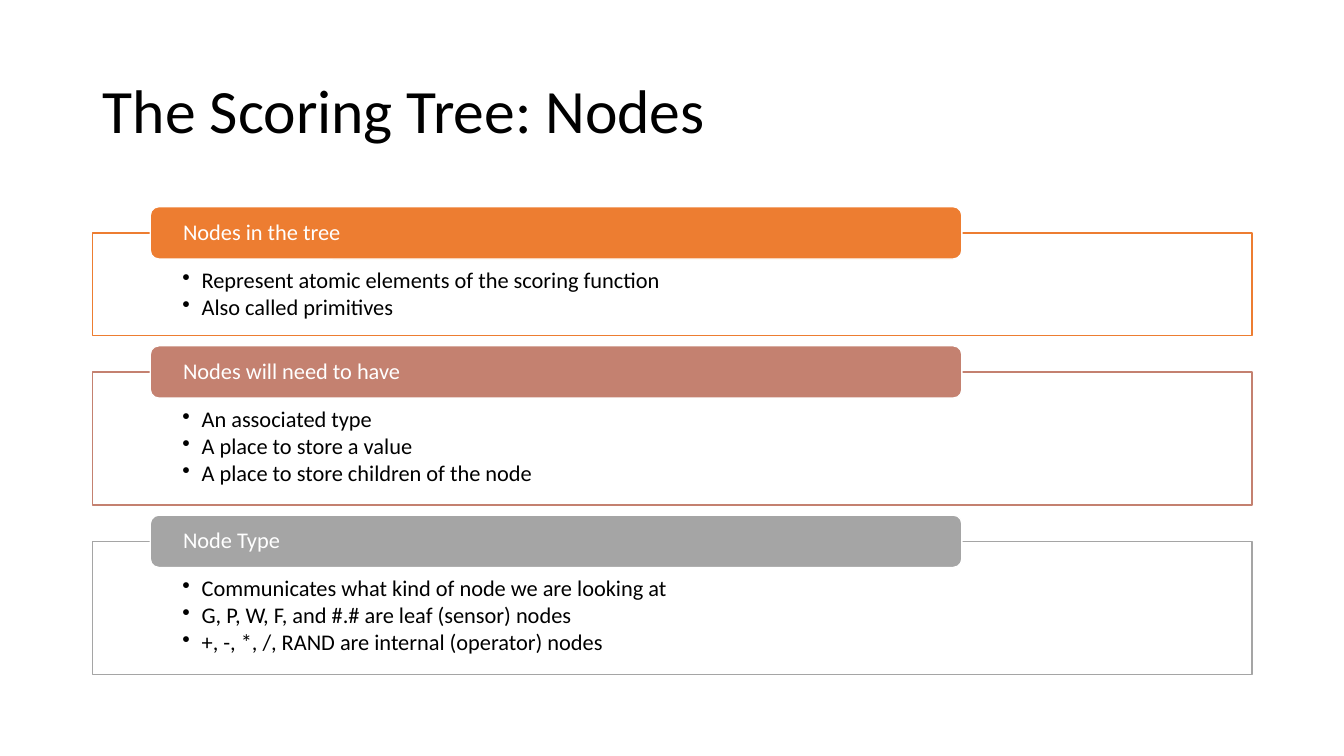
from lxml import etree
from pptx import Presentation
from pptx.dml.color import RGBColor
from pptx.enum.shapes import MSO_SHAPE
from pptx.enum.text import MSO_ANCHOR, PP_ALIGN
from pptx.oxml.ns import qn
from pptx.util import Inches, Pt

RECTANGLE = MSO_SHAPE.RECTANGLE
ROUNDED = MSO_SHAPE.ROUNDED_RECTANGLE
TOP = MSO_ANCHOR.TOP
MIDDLE = MSO_ANCHOR.MIDDLE
LEFT = PP_ALIGN.LEFT

SECTIONS = [
    ("Nodes in the tree", "ED7D31", [
        "Represent atomic elements of the scoring function",
        "Also called primitives",
    ]),
    ("Nodes will need to have", "C48170", [
        "An associated type",
        "A place to store a value",
        "A place to store children of the node",
    ]),
    ("Node Type", "A5A5A5", [
        "Communicates what kind of node we are looking at",
        "G, P, W, F, and #.# are leaf (sensor) nodes",
        "+, -, *, /, RAND are internal (operator) nodes",
    ]),
]


def color(value):
    return RGBColor.from_string(value)


def add_bullet(para):
    properties = para._p.get_or_add_pPr()
    properties.set("marL", str(Inches(0.19)))
    properties.set("indent", str(Inches(-0.19)))
    etree.SubElement(properties, qn("a:buChar")).set("char", "•")


def write_text(frame, lines, size=16, ink="000000", font="Calibri",
               anchor=TOP, insets=(0.1, 0.05, 0.1, 0.05), after=0, bullet=False):
    frame.word_wrap = True
    frame.vertical_anchor = anchor
    (frame.margin_left, frame.margin_top,
     frame.margin_right, frame.margin_bottom) = map(Inches, insets)
    for index, line in enumerate(lines):
        para = frame.add_paragraph() if index else frame.paragraphs[0]
        para.alignment = LEFT
        para.line_spacing = 0.9
        para.space_after = Pt(after)
        if bullet:
            para.level = 1
            add_bullet(para)
        span = para.add_run()
        span.text = line
        span.font.name = font
        span.font.size = Pt(size)
        span.font.color.rgb = color(ink)


class SlideBuilder:
    left = 0.92
    width = 11.5

    def __init__(self, page):
        self.page = page

    def title(self, text):
        box = self.page.shapes.title
        box.left, box.top = Inches(self.left), Inches(0.4)
        box.width, box.height = Inches(self.width), Inches(1.45)
        write_text(box.text_frame, [text], size=44, anchor=MIDDLE)

    def shape(self, kind, left, top, width, height, fill, line):
        box = self.page.shapes.add_shape(
            kind, Inches(left), Inches(top), Inches(width), Inches(height))
        box.shadow.inherit = False
        box.fill.solid()
        box.fill.fore_color.rgb = color(fill)
        box.line.color.rgb = color(line)
        box.line.width = Pt(1)
        return box

    def section(self, top, height, heading, accent, points):
        body = self.shape(RECTANGLE, self.left, top, self.width, height, "FFFFFF", accent)
        tint = body._element.spPr.find(qn("a:solidFill"))[0]
        etree.SubElement(tint, qn("a:alpha")).set("val", "90000")
        write_text(body.text_frame, points, insets=(0.89, 0.36, 0.89, 0.12),
                   after=2, bullet=True)
        header = self.shape(ROUNDED, 1.49, top - 0.26, 8.05, 0.52, accent, "FFFFFF")
        write_text(header.text_frame, [heading], ink="FFFFFF", anchor=MIDDLE,
                   insets=(0.3, 0, 0.3, 0))


def main():
    deck = Presentation()
    deck.slide_width, deck.slide_height = Inches(13.33), Inches(7.5)
    builder = SlideBuilder(deck.slides.add_slide(deck.slide_layouts[5]))
    builder.title("The Scoring Tree: Nodes")
    top = 2.31
    for heading, accent, points in SECTIONS:
        height = 0.42 + 0.3 * len(points)
        builder.section(top, height, heading, accent, points)
        top += height + 0.36
    deck.save("out.pptx")


if __name__ == "__main__":
    main()
